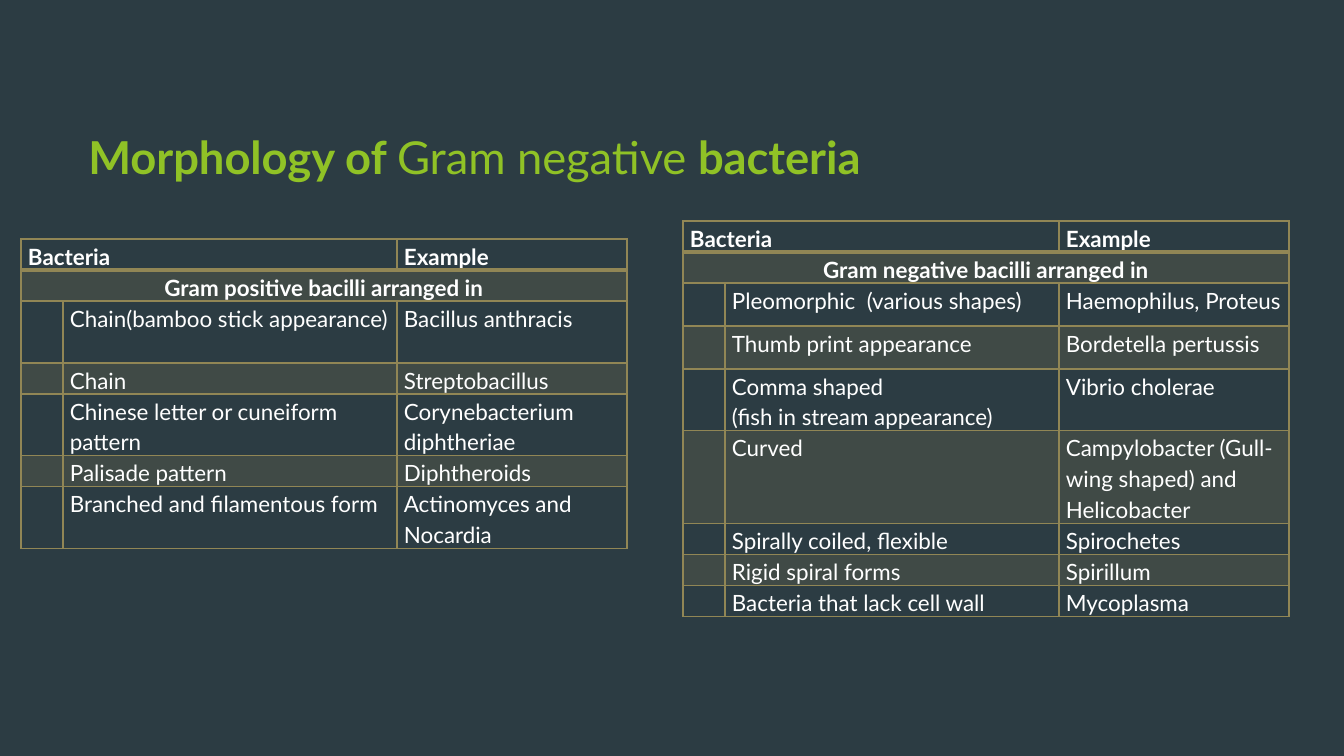
import pptx
import pptx.util
import pptx.dml.color
import pptx.enum.text
import pptx.oxml.ns
import lxml.etree

PX = 9144000 / 1344
FONT = "Lato"
DARK = pptx.dml.color.RGBColor(0x2C, 0x3C, 0x43)
GOLD = pptx.dml.color.RGBColor(0x91, 0x86, 0x55)
LIME = pptx.dml.color.RGBColor(0x90, 0xC2, 0x26)
WHITE = pptx.dml.color.RGBColor(0xFF, 0xFF, 0xFF)
COLS = [42, 334, 230]

POS = [
    (62, "Chain(bamboo stick appearance)", "Bacillus anthracis"),
    (28, "Chain", "Streptobacillus"),
    (59, "Chinese letter or cuneiform pattern", "Corynebacterium diphtheriae"),
    (28, "Palisade pattern", "Diphtheroids"),
    (59, "Branched and filamentous form", "Actinomyces and Nocardia"),
]
NEG = [
    (43, "Pleomorphic  (various shapes)", "Haemophilus, Proteus"),
    (43, "Thumb print appearance", "Bordetella pertussis"),
    (59, "Comma shaped\n(fish in stream appearance)", "Vibrio cholerae"),
    (90, "Curved", "Campylobacter (Gull-wing shaped) and Helicobacter"),
    (28, "Spirally coiled, flexible", "Spirochetes"),
    (28, "Rigid spiral forms", "Spirillum"),
    (28, "Bacteria that lack cell wall", "Mycoplasma"),
]


def px(n):
    return pptx.util.Emu(round(n * PX))


def add(node, tag, **attrs):
    return lxml.etree.SubElement(node, pptx.oxml.ns.qn(tag), **attrs)


def style(run, size, color, bold):
    run.font.name = FONT
    run.font.size = pptx.util.Pt(size)
    run.font.color.rgb = color
    run.font.bold = bold


def edge(cell, side, width):
    line = add(cell._tc.get_or_add_tcPr(), "a:ln" + side, w=str(pptx.util.Pt(width)))
    add(add(line, "a:solidFill"), "a:srgbClr", val=str(GOLD))


def tint(cell):
    cell.fill.solid()
    cell.fill.fore_color.rgb = GOLD
    color = cell._tc.tcPr.find(".//" + pptx.oxml.ns.qn("a:srgbClr") + "[last()]")
    fill = cell._tc.tcPr.find(pptx.oxml.ns.qn("a:solidFill"))
    color = fill[0]
    add(color, "a:alpha", val="20000")


def fill_cell(cell, text, row):
    cell.margin_left = cell.margin_right = px(7)
    cell.margin_top = cell.margin_bottom = 0
    for side in "LRTB":
        edge(cell, side, 2 if row == 0 and side == "B" else 1)
    if row % 2:
        tint(cell)
    else:
        cell.fill.background()
    cell.text_frame.text = text
    for par in cell.text_frame.paragraphs:
        par.line_spacing = 1.15
        if row == 1:
            par.alignment = pptx.enum.text.PP_ALIGN.CENTER
        for run in par.runs:
            style(run, 12, WHITE, row < 2)
        if not par.runs:
            add(par._p, "a:endParaRPr", sz="1200")


def add_grid(slide, left, top, head, items):
    rows = [(28, "Bacteria", "", "Example"), (28, head, "", "")]
    rows += [(tall, "", form, name) for tall, form, name in items]
    high = sum(row[0] for row in rows)
    frame = slide.shapes.add_table(
        len(rows), len(COLS), px(left), px(top), px(sum(COLS)), px(high))
    grid = frame.table
    grid.first_row = grid.horz_banding = False
    for col, wide in zip(grid.columns, COLS):
        col.width = px(wide)
    for i, (tall, *texts) in enumerate(rows):
        grid.rows[i].height = px(tall)
        for j, text in enumerate(texts):
            fill_cell(grid.cell(i, j), text, i)
    grid.cell(0, 0).merge(grid.cell(0, 1))
    grid.cell(1, 0).merge(grid.cell(1, 2))


def add_title(slide, left, top, wide, high):
    title = slide.shapes.title
    title.left, title.top = px(left), px(top)
    title.width, title.height = px(wide), px(high)
    frame = title.text_frame
    frame.word_wrap = True
    frame.vertical_anchor = pptx.enum.text.MSO_ANCHOR.MIDDLE
    frame.margin_top, frame.margin_bottom = px(34), 0
    par = frame.paragraphs[0]
    par.alignment = pptx.enum.text.PP_ALIGN.LEFT
    for text, bold in [("Morphology of ", True), ("Gram negative ", False),
                       ("bacteria", True)]:
        run = par.add_run()
        run.text = text
        style(run, 24.3, LIME, bold)


def main():
    deck = pptx.Presentation()
    deck.slide_width, deck.slide_height = px(1344), px(756)
    slide = deck.slides.add_slide(deck.slide_layouts[5])
    slide.background.fill.solid()
    slide.background.fill.fore_color.rgb = DARK
    add_grid(slide, 683, 221, "Gram negative bacilli arranged in", NEG)
    add_grid(slide, 21, 239, "Gram positive bacilli arranged in", POS)
    add_title(slide, 75, 67, 948, 145)
    deck.save("out.pptx")


if __name__ == "__main__":
    main()
